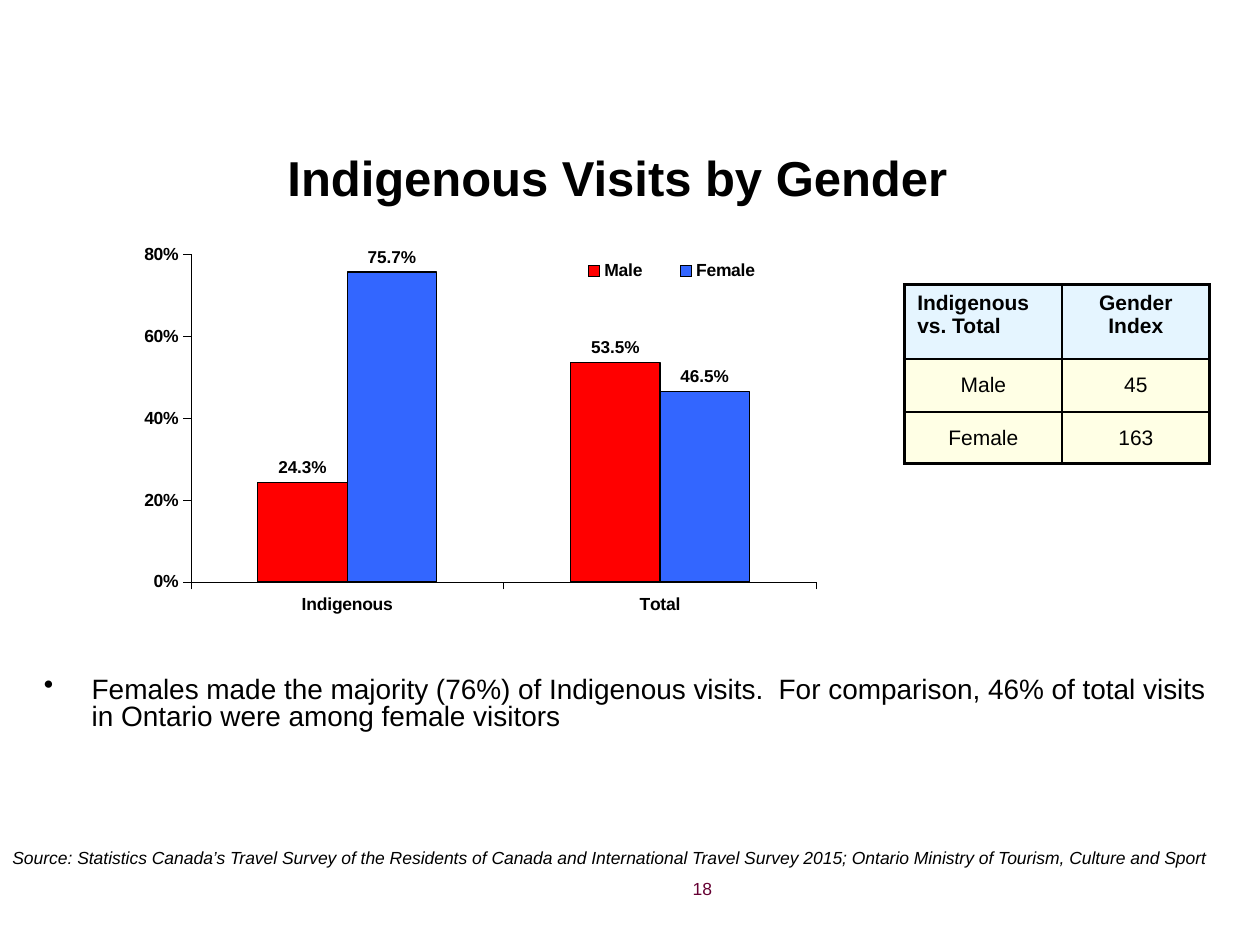
from lxml import etree
from pptx import Presentation
from pptx.chart.data import CategoryChartData
from pptx.dml.color import RGBColor
from pptx.enum.chart import XL_CHART_TYPE as ChartType
from pptx.enum.chart import XL_LABEL_POSITION as LabelPosition
from pptx.enum.chart import XL_LEGEND_POSITION as LegendPosition
from pptx.enum.chart import XL_TICK_MARK as TickMark
from pptx.enum.text import MSO_ANCHOR as Anchor
from pptx.enum.text import PP_ALIGN as Align
from pptx.oxml import parse_xml
from pptx.oxml.ns import nsdecls, qn
from pptx.util import Inches, Pt

BLACK = RGBColor(0x00, 0x00, 0x00)
RED = RGBColor(0xFF, 0x00, 0x00)
BLUE = RGBColor(0x33, 0x66, 0xFF)
PALE_BLUE = RGBColor(0xCC, 0xEC, 0xFF)
PALE_YELLOW = RGBColor(0xFF, 0xFF, 0xCC)
PLUM = RGBColor(0x66, 0x00, 0x33)
THICK, THIN, HAIRLINE = Pt(2.25), Pt(1), Pt(0.19)


def set_font(font, size, color=BLACK, **styles):
    """Give a font its face, size, colour and styles."""
    formats = {"name": "Arial", "size": Pt(size), **styles}
    for name, value in formats.items():
        setattr(font, name, value)
    font.color.rgb = color


def add_text(page, box, text, size, color=BLACK, align=Align.LEFT, **styles):
    """Place one wrapped paragraph in a box and return its frame."""
    frame = page.shapes.add_textbox(*map(Inches, box)).text_frame
    frame.word_wrap = True
    para = frame.paragraphs[0]
    para.alignment = align
    span = para.add_run()
    span.text = text
    set_font(span.font, size, color, **styles)
    return frame


def add_title(page, box, text):
    """Place the centred slide title."""
    frame = add_text(page, box, text, 28, align=Align.CENTER, bold=True)
    frame.vertical_anchor = Anchor.MIDDLE
    frame.margin_bottom = Inches(0.15)


def add_bullet(page, box, text):
    """Place a bulleted finding with a hanging indent."""
    para = add_text(page, box, text, 16).paragraphs[0]
    indent = Inches(0.38)
    properties = para._p.get_or_add_pPr()
    properties.set("marL", str(indent))
    properties.set("indent", str(-indent))
    etree.SubElement(properties, qn("a:buChar")).set("char", "•")
    para.line_spacing = 0.8


def set_layout(part, left, top, width, height, inner=False):
    """Fix a chart part at fractions of the chart area."""
    for old in part.findall(qn("c:layout")):
        part.remove(old)
    target = '<c:layoutTarget val="inner"/>' if inner else ""
    sizes = {"x": left, "y": top, "w": width, "h": height}
    values = "".join(f'<c:{key} val="{value}"/>' for key, value in sizes.items())
    layout = parse_xml(
        f'<c:layout {nsdecls("c")}><c:manualLayout>{target}'
        f'<c:xMode val="edge"/><c:yMode val="edge"/>{values}'
        "</c:manualLayout></c:layout>"
    )
    part.insert(0 if inner else 1, layout)


def add_gender_chart(page, box):
    """Place the clustered columns of visits by gender."""
    data = CategoryChartData(number_format="0.0%")
    data.categories = ["Indigenous", "Total"]
    data.add_series("Male", (0.243, 0.535))
    data.add_series("Female", (0.757, 0.465))
    chart = page.shapes.add_chart(
        ChartType.COLUMN_CLUSTERED, *map(Inches, box), data
    ).chart
    chart.has_title = False
    set_font(chart.font, 10, bold=True)

    for axis in (chart.category_axis, chart.value_axis):
        axis.has_major_gridlines = False
        axis.major_tick_mark = TickMark.OUTSIDE
        axis.format.line.width = HAIRLINE
        axis.format.line.color.rgb = BLACK
        set_font(axis.tick_labels.font, 10, bold=True)
    scale = {"minimum_scale": 0, "maximum_scale": 0.8, "major_unit": 0.2}
    for name, value in scale.items():
        setattr(chart.value_axis, name, value)
    labels = chart.value_axis.tick_labels
    labels.number_format, labels.number_format_is_linked = "0%", False

    plot = chart.plots[0]
    plot.gap_width, plot.overlap, plot.vary_by_categories = 150, 0, False
    for series, color in zip(plot.series, (RED, BLUE)):
        series.format.fill.solid()
        series.format.fill.fore_color.rgb = color
        series.format.line.width = Pt(0.75)
        series.format.line.color.rgb = BLACK
        formats = {
            "show_value": True,
            "number_format": "0.0%",
            "number_format_is_linked": False,
            "position": LabelPosition.OUTSIDE_END,
        }
        for name, value in formats.items():
            setattr(series.data_labels, name, value)
        set_font(series.data_labels.font, 9.8, bold=True)

    chart.has_legend = True
    chart.legend.position = LegendPosition.TOP
    chart.legend.include_in_layout = False
    set_font(chart.legend.font, 10, bold=True)
    set_layout(chart.legend._element, 0.48, 0.05, 0.24, 0.07)
    plot_area = chart._chartSpace.chart.plotArea
    set_layout(plot_area, 0.1, 0.05, 0.65, 0.69, inner=True)


def format_cell(cell, color, borders):
    """Give a cell its four borders and a half-transparent fill."""
    properties = cell._tc.get_or_add_tcPr()
    for side, width in borders.items():
        properties.append(parse_xml(
            f'<a:ln{side} {nsdecls("a")} w="{width}"><a:solidFill>'
            f'<a:srgbClr val="{BLACK}"/></a:solidFill></a:ln{side}>'
        ))
    cell.fill.solid()
    cell.fill.fore_color.rgb = color
    tint = properties.find(qn("a:solidFill")).find(qn("a:srgbClr"))
    etree.SubElement(tint, qn("a:alpha")).set("val", "50000")


def add_index_table(page, box):
    """Place the table of gender indexes."""
    rows = [("Indigenous vs. Total", "Gender Index"), ("Male", "45"), ("Female", "163")]
    table = page.shapes.add_table(3, 2, *map(Inches, box)).table
    table.first_row = table.horz_banding = False
    for column, width in zip(table.columns, (1.25, 1.17)):
        column.width = Inches(width)
    for row, height in zip(table.rows, (0.59, 0.42, 0.41)):
        row.height = Inches(height)
    for r, texts in enumerate(rows):
        for c, text in enumerate(texts):
            cell, header = table.cell(r, c), r == 0
            format_cell(cell, PALE_BLUE if header else PALE_YELLOW, {
                "L": THICK if c == 0 else THIN,
                "R": THICK if c == 1 else THIN,
                "T": THICK if header else THIN,
                "B": THICK if r == 2 else THIN,
            })
            cell.text = text
            para = cell.text_frame.paragraphs[0]
            para.alignment = Align.LEFT if header and c == 0 else Align.CENTER
            set_font(para.runs[0].font, 12, bold=header)
            if not header:
                cell.vertical_anchor = Anchor.MIDDLE
                for side in ("left", "right", "top", "bottom"):
                    setattr(cell, f"margin_{side}", 0)


def main():
    """Build the slide and save the deck."""
    deck = Presentation()
    deck.slide_width, deck.slide_height = Inches(10), Inches(7.5)
    page = deck.slides.add_slide(deck.slide_layouts[6])
    add_title(page, (0.4, 1.08, 9, 0.75), "Indigenous Visits by Gender")
    add_index_table(page, (7.18, 2.26, 2.42, 1.42))
    add_bullet(page, (0.25, 5.33, 9.5, 1.43),
               "Females made the majority (76%) of Indigenous visits.  For comparison, "
               "46% of total visits in Ontario were among female visitors")
    add_text(page, (5.08, 6.92, 0.67, 0.35), "18", 10, PLUM, Align.RIGHT)
    add_gender_chart(page, (0.75, 1.83, 7.64, 3.77))
    add_text(page, (0, 6.67, 9.8, 0.27),
             "Source: Statistics Canada’s Travel Survey of the Residents of Canada and "
             "International Travel Survey 2015; Ontario Ministry of Tourism, Culture and Sport",
             10, italic=True)
    deck.save("out.pptx")


if __name__ == "__main__":
    main()
